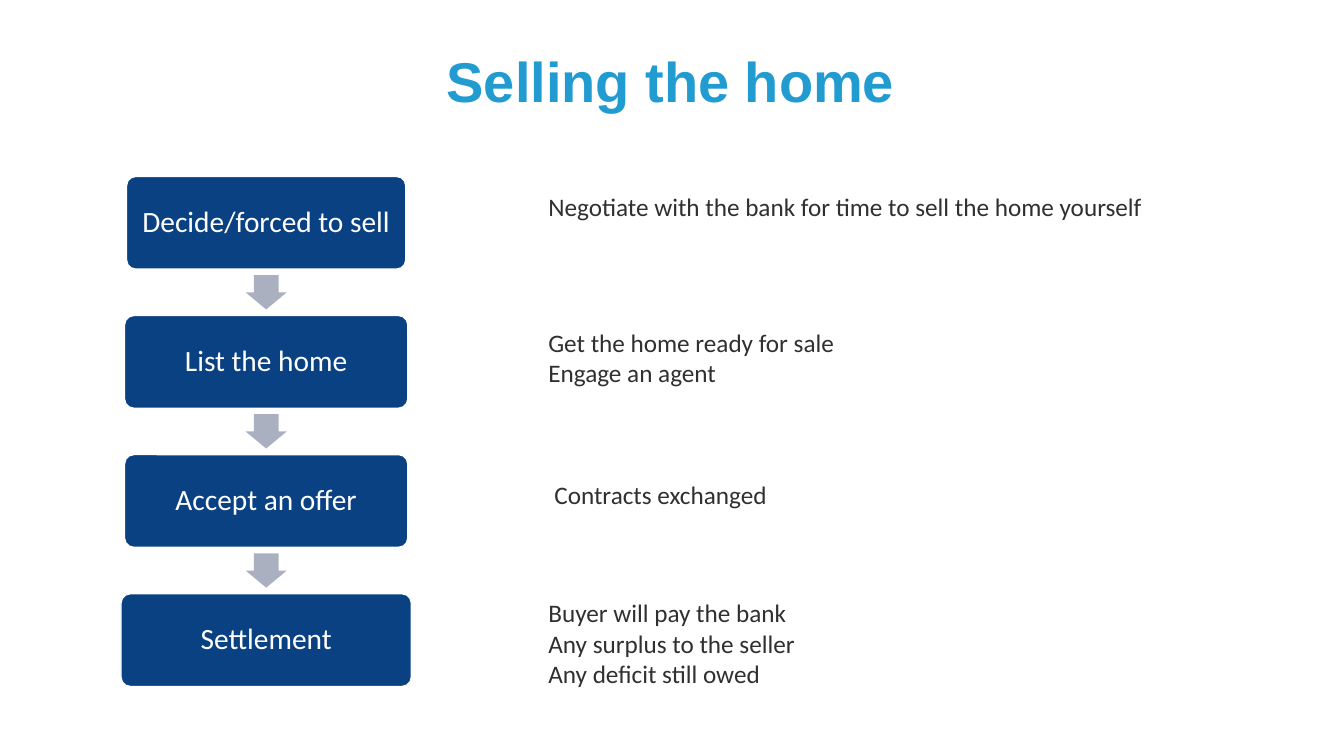
from pptx import Presentation
from pptx.dml.color import RGBColor
from pptx.enum.shapes import MSO_SHAPE as Shape
from pptx.enum.text import MSO_ANCHOR as Anchor, PP_ALIGN as Align
from pptx.util import Inches, Pt

COLOURS = {"title": "229CD0", "step": "094183", "arrow": "ABB0C1",
           "note": "303030", "white": "FFFFFF"}

STEPS = [
    ("Decide/forced to sell", 2.77),
    ("List the home", 2.81),
    ("Accept an offer", 2.81),
    ("Settlement", 2.88),
]

NOTES = [
    (5.34, 1.85, 6.4, 0.4, ["Negotiate with the bank for time to sell the home yourself"]),
    (5.34, 3.2, 7.45, 0.71, ["Get the home ready for sale", "Engage an agent"]),
    (5.4, 4.71, 6.4, 0.4, ["Contracts exchanged"]),
    (5.34, 5.88, 7.21, 1.01, ["Buyer will pay the bank", "Any surplus to the seller",
                              "Any deficit still owed"]),
]


def colour(name):
    """Return the named colour."""
    return RGBColor.from_string(COLOURS[name])


def write(shape, lines, size, ink, font="Calibri", bold=False,
          align=Align.LEFT, anchor=Anchor.TOP, spacing=1.0):
    """Fill a shape with one formatted paragraph per line."""
    frame = shape.text_frame
    frame.word_wrap = True
    frame.vertical_anchor = anchor
    for index, line in enumerate(lines):
        para = frame.add_paragraph() if index else frame.paragraphs[0]
        para.alignment = align
        para.line_spacing = spacing
        span = para.add_run()
        span.text = line
        span.font.name = font
        span.font.size = Pt(size)
        span.font.bold = bold
        span.font.color.rgb = colour(ink)


def add_text(page, left, top, width, height, lines, size, ink, **style):
    """Add a wrapped text box."""
    box = page.shapes.add_textbox(Inches(left), Inches(top), Inches(width), Inches(height))
    write(box, lines, size, ink, **style)


def add_block(page, kind, centre, top, width, height, fill):
    """Add a flat filled shape centred on a vertical axis."""
    block = page.shapes.add_shape(kind, Inches(centre - width / 2), Inches(top),
                                  Inches(width), Inches(height))
    block.shadow.inherit = False
    block.fill.solid()
    block.fill.fore_color.rgb = colour(fill)
    block.line.fill.background()
    return block


def add_process(page, left, top, width, height):
    """Stack the steps in the given box, with an arrow in each gap."""
    centre = left + width / 2
    step_height, arrow_width, arrow_height = 0.92, 0.41, 0.34
    pitch = (height - step_height) / (len(STEPS) - 1)
    for index, (label, step_width) in enumerate(STEPS):
        step_top = top + index * pitch
        if index:
            gap_middle = step_top - (pitch - step_height) / 2
            arrow = add_block(page, Shape.DOWN_ARROW, centre, gap_middle - arrow_height / 2,
                              arrow_width, arrow_height, "arrow")
            arrow.adjustments[0] = 0.6
            arrow.adjustments[1] = 0.5
        step = add_block(page, Shape.ROUNDED_RECTANGLE, centre, step_top,
                         step_width, step_height, "step")
        step.adjustments[0] = 0.1
        step.line.color.rgb = colour("white")
        step.line.width = Pt(1)
        frame = step.text_frame
        frame.margin_left = frame.margin_right = Inches(0.09)
        frame.margin_top = frame.margin_bottom = Inches(0.09)
        write(step, [label], 21, "white", align=Align.CENTER,
              anchor=Anchor.MIDDLE, spacing=0.9)


def main():
    """Build and save the slide."""
    deck = Presentation()
    deck.slide_width, deck.slide_height = Inches(13.33), Inches(7.5)
    page = deck.slides.add_slide(deck.slide_layouts[6])
    add_text(page, 1.02, 0.49, 11.26, 0.97, ["Selling the home"], 40, "title",
             font="Arial", bold=True, align=Align.CENTER, spacing=0.9)
    add_process(page, 1.2, 1.75, 2.88, 5.06)
    for left, top, width, height, lines in NOTES:
        add_text(page, left, top, width, height, lines, 18, "note")
    deck.save("out.pptx")


if __name__ == "__main__":
    main()
